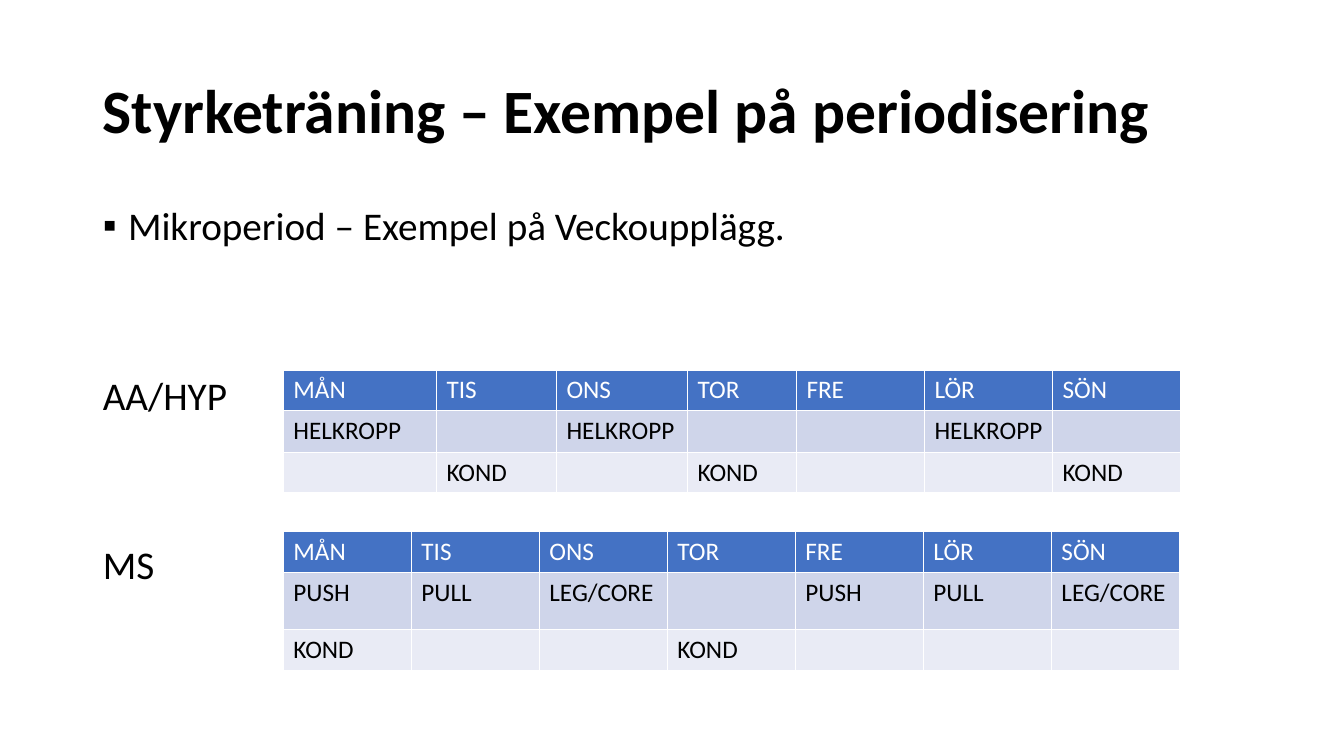
from dataclasses import dataclass

from lxml import etree
from pptx import Presentation
from pptx import util as u
from pptx.dml.color import RGBColor
from pptx.enum import text
from pptx.oxml import ns

FONT = "Calibri"
COLORS = {
    "text": "000000",
    "header_text": "FFFFFF",
    "header": "4472C4",
    "band_dark": "CFD5EA",
    "band_light": "E9EBF5",
}
ROW_FILLS = ("header", "band_dark", "band_light")
DAYS = ("MÅN", "TIS", "ONS", "TOR", "FRE", "LÖR", "SÖN")
SCHEDULE_LEFT = 2.81


@dataclass(frozen=True)
class WeekSchedule:
    top: float
    column_widths: tuple[float, ...]
    row_heights: tuple[float, ...]
    sessions: tuple[tuple[str, ...], ...]


@dataclass(frozen=True)
class BodyLine:
    wording: str
    bullet: str = ""
    space_before: float = 0


SCHEDULES = (
    WeekSchedule(
        3.67,
        (1.52, 1.19, 1.3, 1.08, 1.27, 1.27, 1.27),
        (0.4, 0.41, 0.4),
        (
            ("HELKROPP", "", "HELKROPP", "", "", "HELKROPP", ""),
            ("", "KOND", "", "KOND", "", "", "KOND"),
        ),
    ),
    WeekSchedule(
        5.27,
        (1.27,) * len(DAYS),
        (0.4, 0.57, 0.4),
        (
            ("PUSH", "PULL", "LEG/CORE", "", "PUSH", "PULL", "LEG/CORE"),
            ("KOND", "", "", "KOND", "", "", ""),
        ),
    ),
)
BODY_LINES = (
    BodyLine("Mikroperiod – Exempel på Veckoupplägg.", bullet="▪"),
    BodyLine("AA/HYP", space_before=91),
    BodyLine("MS", space_before=91),
)


def write(paragraph, wording: str, *, size: float, color: str = "text",
          bold: bool = False, line_spacing: float = 1.0,
          space_before: float = 0) -> None:
    paragraph.alignment = text.PP_ALIGN.LEFT
    paragraph.line_spacing = line_spacing
    paragraph.space_before = u.Pt(space_before)
    run = paragraph.add_run()
    run.text = wording
    run.font.name = FONT
    run.font.size = u.Pt(size)
    run.font.bold = bold
    run.font.color.rgb = RGBColor.from_string(COLORS[color])


def set_bullet(paragraph, bullet: str) -> None:
    """Give the paragraph a hanging bullet, or none when bullet is empty."""
    properties = paragraph._p.get_or_add_pPr()
    indent = u.Inches(0.25) if bullet else 0
    properties.set("marL", str(indent))
    properties.set("indent", str(-indent))
    if bullet:
        etree.SubElement(properties, ns.qn("a:buFont"), typeface="Arial")
        etree.SubElement(properties, ns.qn("a:buChar"), char=bullet)
    else:
        etree.SubElement(properties, ns.qn("a:buNone"))


def place(placeholder, left: float, top: float, width: float, height: float,
          anchor: text.MSO_ANCHOR):
    """Move a placeholder and return its text frame."""
    placeholder.left, placeholder.top = u.Inches(left), u.Inches(top)
    placeholder.width, placeholder.height = u.Inches(width), u.Inches(height)
    frame = placeholder.text_frame
    frame.word_wrap = True
    frame.auto_size = text.MSO_AUTO_SIZE.NONE
    frame.vertical_anchor = anchor
    return frame


def add_schedule(slide, schedule: WeekSchedule) -> None:
    rows = (DAYS, *schedule.sessions)
    table = slide.shapes.add_table(
        len(rows), len(DAYS), u.Inches(SCHEDULE_LEFT), u.Inches(schedule.top),
        u.Inches(sum(schedule.column_widths)),
        u.Inches(sum(schedule.row_heights)),
    ).table
    for column, width in zip(table.columns, schedule.column_widths):
        column.width = u.Inches(width)
    for row, height, sessions, fill in zip(
            table.rows, schedule.row_heights, rows, ROW_FILLS):
        row.height = u.Inches(height)
        color = "header_text" if fill == "header" else "text"
        for cell, session in zip(row.cells, sessions):
            cell.fill.solid()
            cell.fill.fore_color.rgb = RGBColor.from_string(COLORS[fill])
            if session:
                write(cell.text_frame.paragraphs[0], session,
                      size=18, color=color)


def main() -> None:
    deck = Presentation()
    deck.slide_width, deck.slide_height = u.Inches(13.33), u.Inches(7.5)
    slide = deck.slides.add_slide(deck.slide_layouts[1])

    title = place(slide.shapes.title, 0.92, 0.4, 11.5, 1.45,
                  text.MSO_ANCHOR.MIDDLE)
    write(title.paragraphs[0], "Styrketräning – Exempel på periodisering",
          size=44, bold=True, line_spacing=0.9)

    body = place(slide.placeholders[1], 0.92, 2, 11.5, 4.76,
                 text.MSO_ANCHOR.TOP)
    for index, line in enumerate(BODY_LINES):
        paragraph = body.add_paragraph() if index else body.paragraphs[0]
        set_bullet(paragraph, line.bullet)
        write(paragraph, line.wording, size=28, line_spacing=0.9,
              space_before=line.space_before)

    for schedule in SCHEDULES:
        add_schedule(slide, schedule)
    deck.save("out.pptx")


if __name__ == "__main__":
    main()
